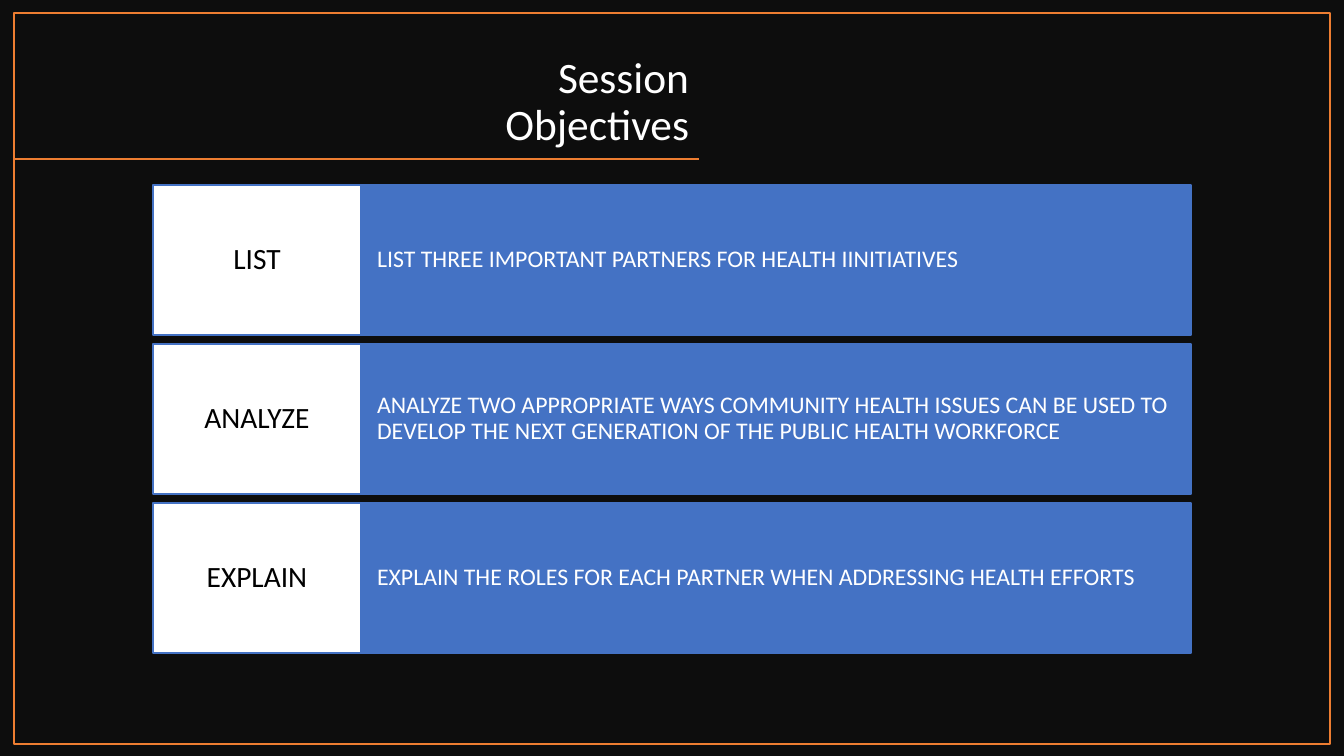
from lxml import etree
from pptx import Presentation
from pptx.dml.color import RGBColor
from pptx.enum.shapes import MSO_CONNECTOR, MSO_SHAPE
from pptx.enum.text import MSO_ANCHOR, PP_ALIGN
from pptx.oxml.ns import qn
from pptx.util import Emu, Pt

RECTANGLE = MSO_SHAPE.RECTANGLE
STRAIGHT = MSO_CONNECTOR.STRAIGHT
LEFT, CENTER, RIGHT = PP_ALIGN.LEFT, PP_ALIGN.CENTER, PP_ALIGN.RIGHT
MIDDLE, BOTTOM = MSO_ANCHOR.MIDDLE, MSO_ANCHOR.BOTTOM

WIDTH, HEIGHT = 1344, 756
EMU_PER_PX = 12192000 / WIDTH
FONT = "Calibri"
COLORS = {
    "night": "0D0D0D",
    "orange": "ED7D31",
    "blue": "4472C4",
    "white": "FFFFFF",
    "black": "000000",
}

OBJECTIVES = [
    ("LIST", "LIST THREE IMPORTANT PARTNERS FOR HEALTH IINITIATIVES"),
    ("ANALYZE", "ANALYZE TWO APPROPRIATE WAYS COMMUNITY HEALTH ISSUES CAN BE USED TO "
                "DEVELOP THE NEXT GENERATION OF THE PUBLIC HEALTH WORKFORCE"),
    ("EXPLAIN", "EXPLAIN THE ROLES FOR EACH PARTNER WHEN ADDRESSING HEALTH EFFORTS"),
]
ROW_TOP, ROW_HEIGHT, ROW_PITCH = 185, 150, 159
LABEL_LEFT, LABEL_WIDTH, DETAIL_WIDTH = 153, 208, 830


def px(length):
    return Emu(round(length * EMU_PER_PX))


def color(name):
    return RGBColor.from_string(COLORS[name])


def add_box(slide, left, top, width, height, fill=None, line=None):
    shape = slide.shapes.add_shape(RECTANGLE, px(left), px(top), px(width), px(height))
    shape.shadow.inherit = False
    if fill:
        shape.fill.solid()
        shape.fill.fore_color.rgb = color(fill)
    else:
        shape.fill.background()
    if line:
        shape.line.color.rgb = color(line)
        shape.line.width = Pt(1)
    else:
        shape.line.fill.background()
    return shape


def add_rule(slide, start_x, end_x, y):
    rule = slide.shapes.add_connector(STRAIGHT, px(start_x), px(y), px(end_x), px(y))
    rule.line.color.rgb = color("orange")
    rule.line.width = Pt(1)
    etree.SubElement(rule.element.spPr, qn("a:effectLst"))


def write_text(shape, lines, size, font_color, align, anchor, inset_x, inset_y):
    frame = shape.text_frame
    frame.word_wrap = True
    frame.vertical_anchor = anchor
    frame.margin_left = frame.margin_right = px(inset_x)
    frame.margin_top = frame.margin_bottom = px(inset_y)
    paragraph = frame.paragraphs[0]
    paragraph.alignment = align
    paragraph.line_spacing = 0.9
    for index, line in enumerate(lines):
        if index:
            paragraph.add_line_break()
        run = paragraph.add_run()
        run.text = line
        run.font.name = FONT
        run.font.size = Pt(size)
        run.font.color.rgb = color(font_color)


def add_title(slide, lines):
    title = slide.shapes.add_textbox(px(93), px(42), px(606), px(113))
    write_text(title, lines, 31, "white", RIGHT, BOTTOM, 10, 5)


def add_objective(slide, top, label, detail):
    detail_box = add_box(slide, LABEL_LEFT + LABEL_WIDTH, top, DETAIL_WIDTH, ROW_HEIGHT,
                         "blue", "blue")
    write_text(detail_box, [detail], 17, "white", LEFT, MIDDLE, 16, 38)
    label_box = add_box(slide, LABEL_LEFT, top, LABEL_WIDTH, ROW_HEIGHT, "white", "blue")
    write_text(label_box, [label], 21, "black", CENTER, MIDDLE, 11, 15)


def main():
    presentation = Presentation()
    presentation.slide_width = px(WIDTH)
    presentation.slide_height = px(HEIGHT)
    slide = presentation.slides.add_slide(presentation.slide_layouts[6])

    # Dark backdrop, title and frame
    add_box(slide, 0, 0, WIDTH, HEIGHT, fill="night")
    add_title(slide, ["Session", "Objectives"])
    add_rule(slide, 699, 14, 159)
    add_box(slide, 14, 13, 1316, 731, line="orange")

    # Objective rows
    for row, (label, detail) in enumerate(OBJECTIVES):
        add_objective(slide, ROW_TOP + row * ROW_PITCH, label, detail)

    presentation.save("out.pptx")


if __name__ == "__main__":
    main()
